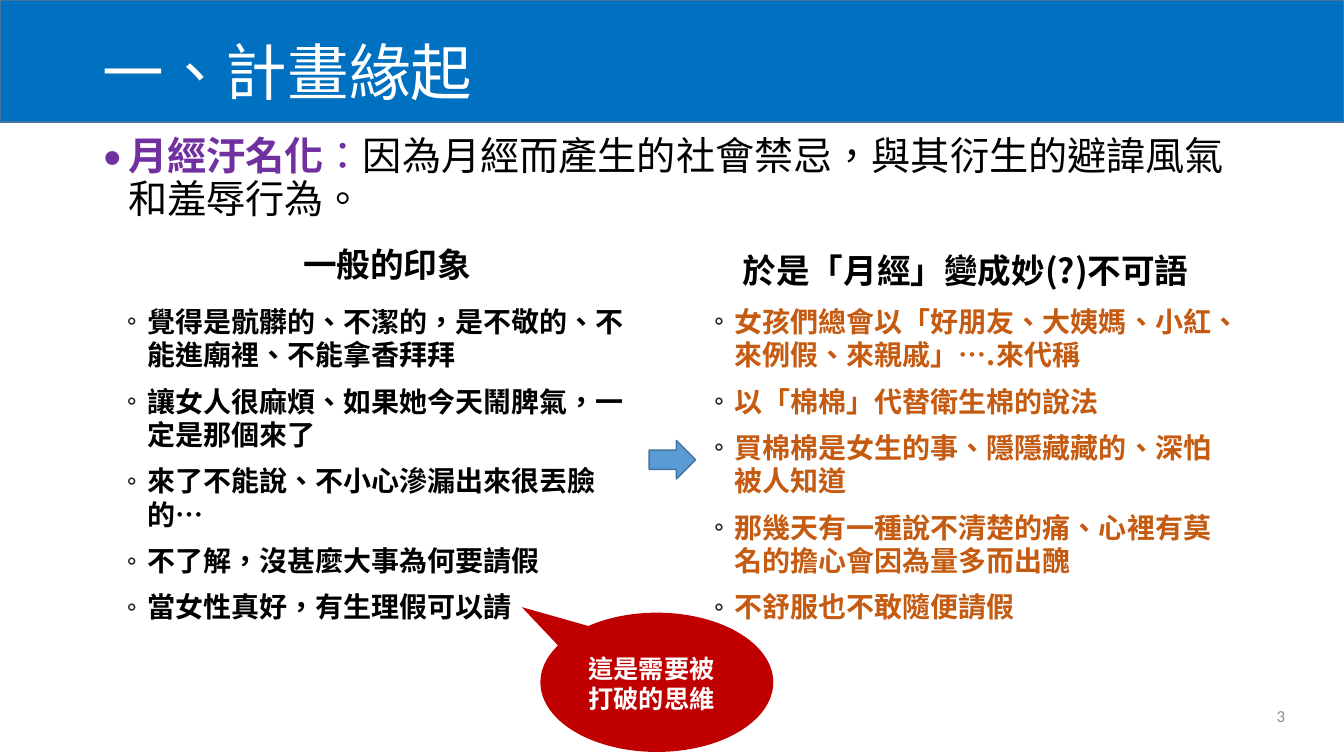
import pptx
import pptx.dml.color
import pptx.enum.shapes
import pptx.enum.text
import pptx.oxml.ns
import pptx.util
import lxml.etree

Cm = pptx.util.Cm
Pt = pptx.util.Pt
Shape = pptx.enum.shapes.MSO_SHAPE
Align = pptx.enum.text.PP_ALIGN
Anchor = pptx.enum.text.MSO_ANCHOR

COLORS = {
    "banner": "0070C0",
    "outline": "43739E",
    "arrow": "5B9BD5",
    "callout": "C00000",
    "term": "7030A0",
    "taboo": "C55A11",
    "bullet": "262626",
    "number": "8C8C8C",
    "black": "000000",
    "white": "FFFFFF",
}


class SlideBuilder:
    font_name = "Noto Sans CJK SC"
    latin_name = "Calibri"
    tight_spacing = 0.9

    def __init__(self, slide):
        self.slide = slide

    def color(self, name):
        return pptx.dml.color.RGBColor.from_string(COLORS[name])

    def shape(self, kind, box, fill, outline=None):
        figure = self.slide.shapes.add_shape(kind, *map(Cm, box))
        figure.shadow.inherit = False
        figure.fill.solid()
        figure.fill.fore_color.rgb = self.color(fill)
        if outline:
            figure.line.color.rgb = self.color(outline)
            figure.line.width = Pt(1)
        else:
            figure.line.fill.background()
        return figure

    def style(self, font, size, color, bold=False, name=None):
        font.name = name or self.font_name
        font.size = Pt(size)
        font.bold = bold
        font.color.rgb = self.color(color)
        font._element.set("lang", "zh-TW")
        east_asian = lxml.etree.Element(pptx.oxml.ns.qn("a:ea"), typeface=font.name)
        font._element.find(pptx.oxml.ns.qn("a:latin")).addnext(east_asian)

    def bullet(self, paragraph, mark, color, indent):
        properties = paragraph._p.get_or_add_pPr()
        properties.set("marL", str(Cm(indent)))
        properties.set("indent", str(-Cm(indent)))
        tint = lxml.etree.SubElement(properties, pptx.oxml.ns.qn("a:buClr"))
        lxml.etree.SubElement(tint, pptx.oxml.ns.qn("a:srgbClr"), val=COLORS[color])
        lxml.etree.SubElement(properties, pptx.oxml.ns.qn("a:buFont"), typeface=self.latin_name)
        lxml.etree.SubElement(properties, pptx.oxml.ns.qn("a:buChar"), char=mark)

    def frame(self, box, anchor=Anchor.TOP):
        frame = self.slide.shapes.add_textbox(*map(Cm, box)).text_frame
        frame.word_wrap = True
        frame.vertical_anchor = anchor
        return frame

    def line(self, box, text, size, color, bold=False, align=Align.LEFT,
             anchor=Anchor.MIDDLE, spacing=1.0, name=None):
        paragraph = self.frame(box, anchor).paragraphs[0]
        paragraph.text = text
        paragraph.alignment = align
        paragraph.line_spacing = spacing
        self.style(paragraph.font, size, color, bold, name)

    def definition(self, box, parts):
        paragraph = self.frame(box).paragraphs[0]
        paragraph.line_spacing = self.tight_spacing
        paragraph.space_before = Pt(10)
        self.bullet(paragraph, "•", "term", 0.64)
        for text, color, bold in parts:
            run = paragraph.add_run()
            run.text = text
            self.style(run.font, 28, color, bold)

    def bullets(self, box, items, color):
        frame = self.frame(box)
        frame.text = "\n".join(items)
        for paragraph in frame.paragraphs:
            paragraph.space_before = Pt(9)
            self.bullet(paragraph, "◦", "bullet", 0.51)
            self.style(paragraph.font, 20, color, True)


def main():
    deck = pptx.Presentation()
    deck.slide_width = Cm(33.87)
    deck.slide_height = Cm(19.05)
    builder = SlideBuilder(deck.slides.add_slide(deck.slide_layouts[6]))

    builder.shape(Shape.RECTANGLE, (0, 0, 33.87, 3.08), "banner", "outline")
    builder.line((2.34, 1.02, 29.21, 1.75), "一、計畫緣起", 44, "white",
                 spacing=builder.tight_spacing)
    builder.definition((2.34, 3.33, 29.21, 13.84), [
        ("月經汙名化", "term", True),
        ("：", "term", False),
        ("因為月經而產生的社會禁忌，與其衍生的避諱風氣和羞辱行為。", "black", False),
    ])

    impressions = [
        "覺得是骯髒的、不潔的，是不敬的、不能進廟裡、不能拿香拜拜",
        "讓女人很麻煩、如果她今天鬧脾氣，一定是那個來了",
        "來了不能說、不小心滲漏出來很丟臉的…",
        "不了解，沒甚麼大事為何要請假",
        "當女性真好，有生理假可以請",
    ]
    euphemisms = [
        "女孩們總會以「好朋友、大姨媽、小紅、來例假、來親戚」….來代稱",
        "以「棉棉」代替衛生棉的說法",
        "買棉棉是女生的事、隱隱藏藏的、深怕被人知道",
        "那幾天有一種說不清楚的痛、心裡有莫名的擔心會因為量多而出醜",
        "不舒服也不敢隨便請假",
    ]
    columns = [
        ("一般的印象", 3.15, 5.77, impressions, 2.95, "black"),
        ("於是「月經」變成妙(?)不可語", 17.73, 5.92, euphemisms, 17.75, "taboo"),
    ]
    for heading, heading_left, heading_top, items, list_left, color in columns:
        builder.line((heading_left, heading_top, 13.21, 1.78), heading, 24, "black",
                     bold=True, align=Align.CENTER)
        builder.bullets((list_left, 7.54, 13.21, 8.89), items, color)

    builder.shape(Shape.RIGHT_ARROW, (16.36, 11.1, 1.17, 0.97), "arrow", "outline")
    callout = builder.shape(Shape.OVAL_CALLOUT, (13.62, 15.44, 5.87, 3.51), "callout")
    callout.adjustments[0] = -0.58
    callout.adjustments[1] = -0.54
    builder.line((14.58, 16.33, 3.96, 1.8), "這是需要被打破的思維", 18, "white",
                 bold=True, anchor=Anchor.TOP)
    builder.line((25.02, 17.53, 7.62, 1.02), "3", 12, "number",
                 align=Align.RIGHT, name=builder.latin_name)

    deck.save("out.pptx")


if __name__ == "__main__":
    main()
